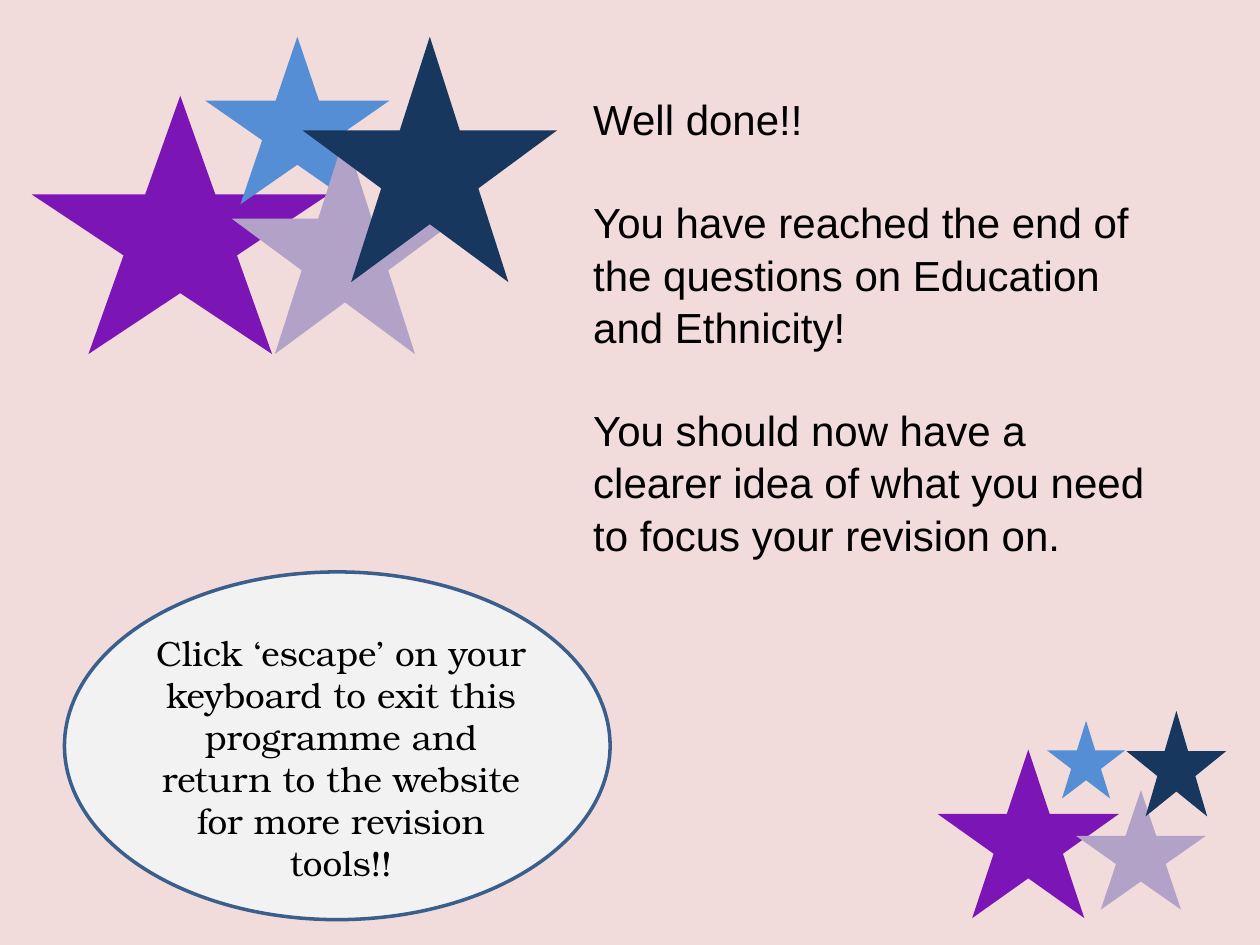
from pptx import Presentation
from pptx.dml.color import RGBColor
from pptx.enum.shapes import MSO_SHAPE
from pptx.enum.text import MSO_AUTO_SIZE, PP_ALIGN
from pptx.util import Cm, Pt

STAR_COLOURS = ("7C15B5", "558ED5", "B3A2C7", "17375E")
# Left, top, width and height in centimetres, one star per colour
LARGE_STARS = (
    (0.64, 1.93, 5.99, 5.21),
    (4.14, 0.74, 3.71, 3.38),
    (4.67, 2.72, 4.57, 4.42),
    (6.1, 0.74, 5.13, 4.95),
)
SMALL_STARS = (
    (18.9, 15.11, 3.66, 3.4),
    (21.11, 14.53, 1.57, 1.57),
    (21.69, 15.93, 2.62, 2.41),
    (22.71, 14.33, 2.01, 2.13),
)
CLOSING_MESSAGE = (
    "Well done!!",
    "You have reached the end of the questions on Education and Ethnicity!",
    "You should now have a clearer idea of what you need to focus your revision on.",
)
EXIT_HINT = (
    "Click ‘escape’ on your keyboard to exit this programme and return "
    "to the website for more revision tools!!",
)


def colour(hex_string):
    return RGBColor.from_string(hex_string)


class SlideBuilder:
    ink = "000000"
    background = "F2DCDB"

    def __init__(self, page):
        self.page = page
        page.background.fill.solid()
        page.background.fill.fore_color.rgb = colour(self.background)

    def shape(self, kind, place, fill, line=None):
        shape = self.page.shapes.add_shape(kind, *map(Cm, place))
        shape.shadow.inherit = False
        shape.fill.solid()
        shape.fill.fore_color.rgb = colour(fill)
        if line:
            shape.line.color.rgb = colour(line)
            shape.line.width = Pt(2)
        else:
            shape.line.fill.background()

    def star_cluster(self, places):
        for place, fill in zip(places, STAR_COLOURS):
            self.shape(MSO_SHAPE.STAR_5_POINT, place, fill)

    def text(self, place, paragraphs, font, size, align=PP_ALIGN.LEFT,
             line_spacing=None, gap=0):
        box = self.page.shapes.add_textbox(*map(Cm, place))
        frame = box.text_frame
        frame.word_wrap = True
        frame.auto_size = MSO_AUTO_SIZE.SHAPE_TO_FIT_TEXT
        for index, words in enumerate(paragraphs):
            para = frame.add_paragraph() if index else frame.paragraphs[0]
            para.text = words
            para.alignment = align
            para.line_spacing = line_spacing
            if index:
                para.space_before = Pt(gap)
            para.font.name = font
            para.font.size = Pt(size)
            para.font.color.rgb = colour(self.ink)


def main():
    deck = Presentation()
    deck.slide_width, deck.slide_height = Cm(25.4), Cm(19.05)
    blank_layout = deck.slide_layouts[6]
    builder = SlideBuilder(deck.slides.add_slide(blank_layout))

    builder.star_cluster(LARGE_STARS)
    builder.text((11.71, 1.73, 11.99, 11.53), CLOSING_MESSAGE, "Arial", 24,
                 line_spacing=1.04, gap=28.8)
    builder.shape(MSO_SHAPE.OVAL, (1.3, 11.53, 11, 7.01), "F2F2F2", line="3A5F8C")
    builder.text((2.67, 12.6, 8.41, 5.38), EXIT_HINT, "TeX Gyre Bonum", 20,
                 align=PP_ALIGN.CENTER)
    builder.star_cluster(SMALL_STARS)

    deck.save("out.pptx")


if __name__ == "__main__":
    main()
